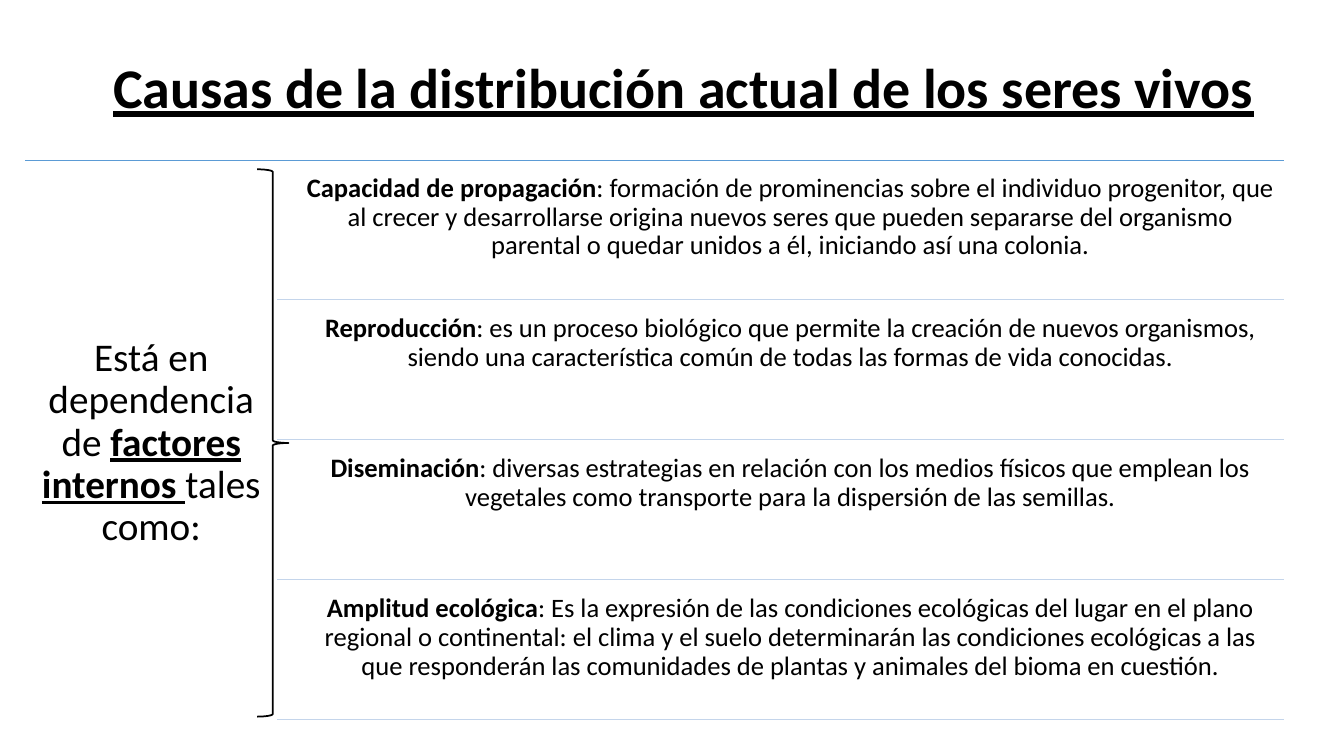
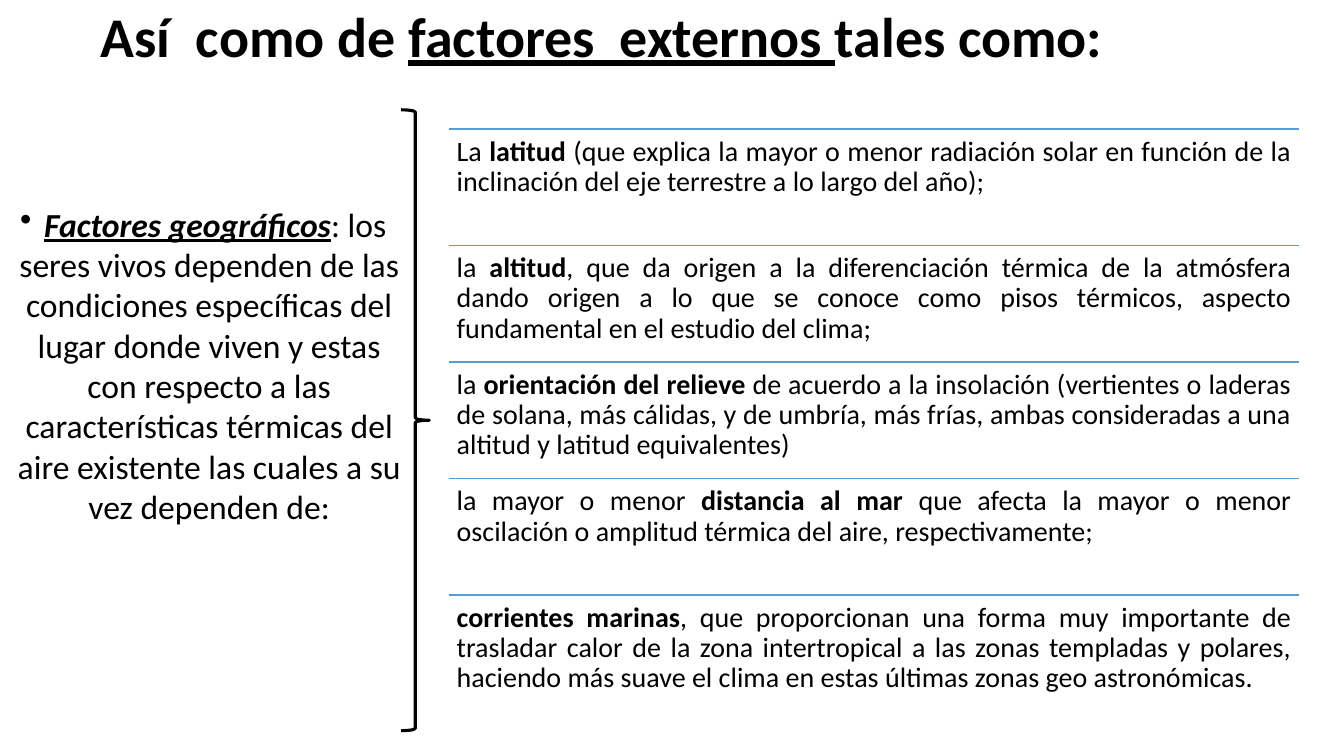
from dataclasses import dataclass

from lxml.etree import SubElement
from pptx import Presentation
from pptx.dml.color import RGBColor
from pptx.enum.shapes import MSO_CONNECTOR, MSO_SHAPE
from pptx.enum.text import MSO_ANCHOR, MSO_AUTO_SIZE, PP_ALIGN
from pptx.oxml.ns import qn
from pptx.util import Inches, Pt


@dataclass(frozen=True)
class Theme:
    font: str = "Calibri"
    ink: RGBColor = RGBColor(0x00, 0x00, 0x00)
    rule: RGBColor = RGBColor(0x5B, 0x9B, 0xD5)
    pale_rule: RGBColor = RGBColor(0xC4, 0xD5, 0xEB)
    title_size: int = 40
    rule_width: float = 1
    line_spacing: float = 0.9


@dataclass(frozen=True)
class Run:
    text: str
    bold: bool = False
    italic: bool = False
    underline: bool = False


@dataclass(frozen=True)
class Box:
    """Position and size in percent of the slide's width and height."""
    x: float
    y: float
    w: float
    h: float

    def row(self, index: int, pitch: float) -> "Box":
        return Box(self.x, self.y + index * pitch, self.w, self.h)


THEME = Theme()
SLIDE_W, SLIDE_H = Inches(13.333), Inches(7.5)
TITLE_ONLY = 5


def across(share: float) -> int:
    return round(SLIDE_W * share / 100)


def down(share: float) -> int:
    return round(SLIDE_H * share / 100)


def lengths(box: Box) -> tuple[int, int, int, int]:
    return across(box.x), down(box.y), across(box.w), down(box.h)


def write(sp, runs: list[Run], *, size: float, align=PP_ALIGN.CENTER,
          anchor=MSO_ANCHOR.TOP, inset: tuple[float, float] = (0.1, 0.05),
          spacing: float = THEME.line_spacing, bullet: str = "") -> None:
    """Fill a shape with one paragraph; inset is horizontal, vertical in inches."""
    tf = sp.text_frame
    tf.word_wrap = True
    tf.auto_size = MSO_AUTO_SIZE.NONE
    tf.vertical_anchor = anchor
    tf.margin_left = tf.margin_right = Inches(inset[0])
    tf.margin_top = tf.margin_bottom = Inches(inset[1])
    p = tf.paragraphs[0]
    p.alignment = align
    p.line_spacing = spacing
    if bullet:
        SubElement(p._p.get_or_add_pPr(), qn("a:buChar")).set("char", bullet)
    for run in runs:
        r = p.add_run()
        r.text = run.text
        r.font.name, r.font.size = THEME.font, Pt(size)
        r.font.color.rgb = THEME.ink
        r.font.bold, r.font.italic = run.bold, run.italic
        r.font.underline = run.underline


def add_titled_slide(prs, box: Box, runs: list[Run], align):
    slide = prs.slides.add_slide(prs.slide_layouts[TITLE_ONLY])
    title = slide.shapes.title
    title.left, title.top, title.width, title.height = lengths(box)
    write(title, runs, size=THEME.title_size, align=align,
          anchor=MSO_ANCHOR.MIDDLE)
    return slide


def add_text(slide, box: Box, runs: list[Run], **fmt) -> None:
    write(slide.shapes.add_textbox(*lengths(box)), runs, **fmt)


def add_rule(slide, x1: float, x2: float, y: float, color: RGBColor) -> None:
    line = slide.shapes.add_connector(
        MSO_CONNECTOR.STRAIGHT, across(x1), down(y), across(x2), down(y))
    line.line.color.rgb = color
    line.line.width = Pt(THEME.rule_width)
    SubElement(line._element.spPr, qn("a:effectLst"))


def add_brace(slide, box: Box, width: float) -> None:
    sp = slide.shapes.add_shape(MSO_SHAPE.RIGHT_BRACE, *lengths(box))
    sp.shadow.inherit = False
    sp.fill.background()
    sp.line.color.rgb = THEME.ink
    sp.line.width = Pt(width)


INTERNAL_FACTORS = [
    ("Capacidad de propagación",
     ": formación de prominencias sobre el individuo progenitor, que al crecer "
     "y desarrollarse origina nuevos seres que pueden separarse del organismo "
     "parental o quedar unidos a él, iniciando así una colonia."),
    ("Reproducción",
     ": es un proceso biológico que permite la creación de nuevos organismos, "
     "siendo una característica común de todas las formas de vida conocidas."),
    ("Diseminación",
     ": diversas estrategias en relación con los medios físicos que emplean los "
     "vegetales como transporte para la dispersión de las semillas."),
    ("Amplitud ecológica",
     ": Es la expresión de las condiciones ecológicas del lugar en el plano "
     "regional o continental: el clima y el suelo determinarán las condiciones "
     "ecológicas a las que responderán las comunidades de plantas y animales "
     "del bioma en cuestión."),
]

EXTERNAL_FACTORS = [
    ("La ", "latitud",
     " (que explica la mayor o menor radiación solar en función de la "
     "inclinación del eje terrestre a lo largo del año);"),
    ("la ", "altitud",
     ", que da origen a la diferenciación térmica de la atmósfera dando origen "
     "a lo que se conoce como pisos térmicos, aspecto fundamental en el estudio "
     "del clima;"),
    ("la ", "orientación del relieve",
     " de acuerdo a la insolación (vertientes o laderas de solana, más cálidas, "
     "y de umbría, más frías, ambas consideradas a una altitud y latitud "
     "equivalentes)"),
    ("la mayor o menor ", "distancia al mar",
     " que afecta la mayor o menor oscilación o amplitud térmica del aire, "
     "respectivamente;"),
    ("", "corrientes marinas",
     ", que proporcionan una forma muy importante de trasladar calor de la zona "
     "intertropical a las zonas templadas y polares, haciendo más suave el "
     "clima en estas últimas zonas geo astronómicas."),
]


def internal_factors_slide(prs) -> None:
    slide = add_titled_slide(
        prs, Box(3.53, 5.33, 94.65, 13.2),
        [Run("Causas de la distribución actual de los seres vivos",
             bold=True, underline=True)], PP_ALIGN.CENTER)
    lead = Box(1.88, 21.2, 18.75, 74.93)
    first, pitch = Box(22.05, 22, 73.5, 17.6), 18.53
    right = first.x + first.w
    add_rule(slide, lead.x, right, lead.y, THEME.rule)
    add_text(slide, lead,
             [Run("Está en dependencia de "),
              Run("factores internos ", bold=True, underline=True),
              Run("tales como:")],
             size=28, anchor=MSO_ANCHOR.MIDDLE, inset=(0.12, 0.12))
    for i, (name, meaning) in enumerate(INTERNAL_FACTORS):
        row = first.row(i, pitch)
        add_text(slide, row, [Run(name, bold=True), Run(meaning)],
                 size=19, inset=(0.08, 0.08))
        add_rule(slide, lead.x + lead.w, right, row.y + row.h, THEME.pale_rule)
    add_brace(slide, Box(19.13, 22.4, 2.33, 72.4), 1.25)


def external_factors_slide(prs) -> None:
    slide = add_titled_slide(
        prs, Box(6.75, 0, 86.25, 10.4),
        [Run("Así  como de ", bold=True),
         Run("factores  externos ", bold=True, underline=True),
         Run("tales como:", bold=True)], PP_ALIGN.LEFT)
    first = Box(33.38, 17.07, 63.3, 15.41)
    for i, (before, name, after) in enumerate(EXTERNAL_FACTORS):
        row = first.row(i, first.h)
        add_rule(slide, row.x, row.x + row.w, row.y, THEME.rule)
        runs = [Run(before), Run(name, bold=True), Run(after)]
        add_text(slide, row, [run for run in runs if run.text], size=20,
                 align=PP_ALIGN.JUSTIFY, inset=(0.08, 0.08))
    add_text(slide, Box(0.15, 26.27, 30.83, 43.47),
             [Run("Factores geográficos", bold=True, italic=True, underline=True),
              Run(": los seres vivos dependen de las condiciones específicas del "
                  "lugar donde viven y estas con respecto a las características "
                  "térmicas del aire existente las cuales a su vez dependen de:")],
             size=24, spacing=1, bullet="•")
    add_brace(slide, Box(29.85, 14.53, 2.1, 82.13), 2.25)


def main() -> None:
    prs = Presentation()
    prs.slide_width, prs.slide_height = SLIDE_W, SLIDE_H
    internal_factors_slide(prs)
    external_factors_slide(prs)
    prs.save("out.pptx")


if __name__ == "__main__":
    main()
